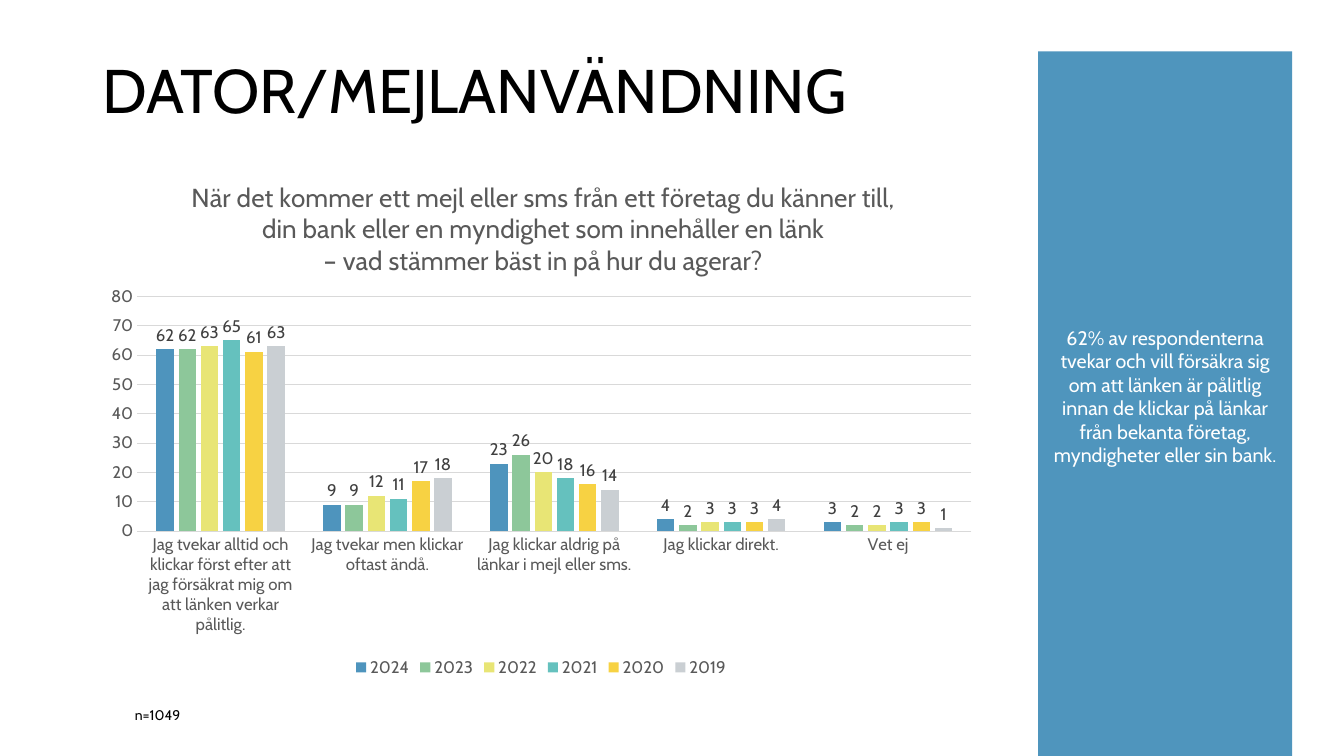
"""Build the survey slide on how people treat links in mail and text messages."""
from lxml import etree
from pptx import Presentation
from pptx import util as u
from pptx.chart.data import CategoryChartData
from pptx.dml.color import RGBColor
from pptx.enum import chart as ch, shapes, text
from pptx.oxml.ns import qn

HEADING = "DATOR/MEJLANVÄNDNING"
QUESTION = [
    "När det kommer ett mejl eller sms från ett företag du känner till,",
    "din bank eller en myndighet som innehåller en länk",
    "– vad stämmer bäst in på hur du agerar?",
]
ANSWERS = [
    "Jag tvekar alltid och klickar först efter att jag försäkrat mig om att länken verkar pålitlig.",
    "Jag tvekar men klickar oftast ändå.",
    "Jag klickar aldrig på länkar i mejl eller sms.",
    "Jag klickar direkt.",
    "Vet ej",
]
YEARS = {
    "2024": ([62, 9, 23, 4, 3], "4E94BD"),
    "2023": ([62, 9, 26, 2, 2], "8DC79A"),
    "2022": ([63, 12, 20, 3, 2], "E8E575"),
    "2021": ([65, 11, 18, 3, 3], "65C1BE"),
    "2020": ([61, 17, 16, 3, 3], "F7D243"),
    "2019": ([63, 18, 14, 4, 1], "CACFD3"),
}
SAMPLE = "n=1049"
FINDING = (
    "62% av respondenterna tvekar och vill försäkra sig om att länken är pålitlig "
    "innan de klickar på länkar från bekanta företag, myndigheter eller sin bank."
)
THEME = {
    "font": "Cabin",
    "ink": "000000", "muted": "595959", "value": "404040",
    "grid": "D9D9D9", "panel": "4F95BD", "panel_ink": "FFFFFF",
    "heading": 44, "question": 18.6, "axis": 12, "note": 10, "finding": 14,
}
BOXES = {
    "heading": (66, 14.4, 828, 104.4),
    "chart": (66, 111.6, 640.8, 375.12),
    "sample": (89.28, 501.12, 712.8, 19.44),
    "panel": (741.6, 36.72, 181.44, 509.76),
}
PLOT_AREA = {"x": 0.05, "y": 0.267, "w": 0.93, "h": 0.447}
QUESTION_SPOT = {"x": 0.107, "y": 0.04}


def assign(target, **values):
    for key, value in values.items():
        setattr(target, key, value)


def box(name):
    return [u.Pt(length) for length in BOXES[name]]


def style_font(font, size, ink):
    assign(font, name=THEME["font"], size=u.Pt(THEME[size]), bold=False)
    font.color.rgb = RGBColor.from_string(THEME[ink])


def paint(fill, colour):
    fill.solid()
    fill.fore_color.rgb = RGBColor.from_string(colour)


def write(frame, lines, size, ink, align, spacing=None):
    for index, line in enumerate(lines):
        paragraph = frame.paragraphs[0] if index == 0 else frame.add_paragraph()
        assign(paragraph, alignment=align, line_spacing=spacing)
        run = paragraph.add_run()
        run.text = line
        style_font(run.font, size, ink)


def place(part, index, fractions, inner=False):
    for old in part.findall(qn("c:layout")):
        part.remove(old)
    layout = etree.Element(qn("c:layout"))
    manual = etree.SubElement(layout, qn("c:manualLayout"))
    settings = {"layoutTarget": "inner"} if inner else {}
    settings |= {"xMode": "edge", "yMode": "edge"} | fractions
    for tag, value in settings.items():
        etree.SubElement(manual, qn(f"c:{tag}")).set("val", str(value))
    part.insert(index, layout)


def add_label(slide, name, line, size, anchor):
    frame = slide.shapes.add_textbox(*box(name)).text_frame
    assign(frame, word_wrap=True, vertical_anchor=anchor)
    spacing = 0.9 if name == "heading" else None
    write(frame, [line], size, "ink", text.PP_ALIGN.LEFT, spacing)


def add_answers_chart(slide):
    data = CategoryChartData()
    data.categories = ANSWERS
    for year, (shares, _) in YEARS.items():
        data.add_series(year, shares)
    chart = slide.shapes.add_chart(
        ch.XL_CHART_TYPE.COLUMN_CLUSTERED, *box("chart"), data).chart
    style_font(chart.font, "note", "ink")

    assign(chart, has_title=True, has_legend=True)
    write(chart.chart_title.text_frame, QUESTION, "question", "muted", text.PP_ALIGN.CENTER)
    place(chart.chart_title._element, 1, QUESTION_SPOT)
    place(chart._chartSpace.chart.plotArea, 0, PLOT_AREA, inner=True)
    assign(chart.legend, position=ch.XL_LEGEND_POSITION.BOTTOM, include_in_layout=False)
    style_font(chart.legend.font, "axis", "muted")

    answers, shares = chart.category_axis, chart.value_axis
    for axis in (answers, shares):
        assign(axis, major_tick_mark=ch.XL_TICK_MARK.NONE, minor_tick_mark=ch.XL_TICK_MARK.NONE)
        style_font(axis.tick_labels.font, "axis", "muted")
    assign(shares, minimum_scale=0, maximum_scale=80, major_unit=10, has_major_gridlines=True)
    shares.format.line.fill.background()
    for line in (answers.format.line, shares.major_gridlines.format.line):
        paint(line.fill, THEME["grid"])
        line.width = u.Pt(0.75)

    plot = chart.plots[0]
    assign(plot, gap_width=219, overlap=-27, vary_by_categories=False)
    for series, (_, colour) in zip(plot.series, YEARS.values()):
        paint(series.format.fill, colour)
        labels = series.data_labels
        assign(labels, show_value=True, position=ch.XL_LABEL_POSITION.OUTSIDE_END)
        style_font(labels.font, "axis", "value")


def add_panel(slide):
    panel = slide.shapes.add_shape(shapes.MSO_SHAPE.RECTANGLE, *box("panel"))
    panel.shadow.inherit = False
    paint(panel.fill, THEME["panel"])
    panel.line.fill.background()
    frame = panel.text_frame
    assign(frame, word_wrap=True, vertical_anchor=text.MSO_ANCHOR.MIDDLE, margin_bottom=u.Pt(20.6))
    write(frame, [FINDING], "finding", "panel_ink", text.PP_ALIGN.CENTER)


def main():
    deck = Presentation()
    assign(deck, slide_width=u.Pt(960), slide_height=u.Pt(540))
    slide = deck.slides.add_slide(deck.slide_layouts[6])
    add_label(slide, "heading", HEADING, "heading", text.MSO_ANCHOR.MIDDLE)
    add_answers_chart(slide)
    add_label(slide, "sample", SAMPLE, "note", text.MSO_ANCHOR.TOP)
    add_panel(slide)
    deck.save("out.pptx")


if __name__ == "__main__":
    main()
